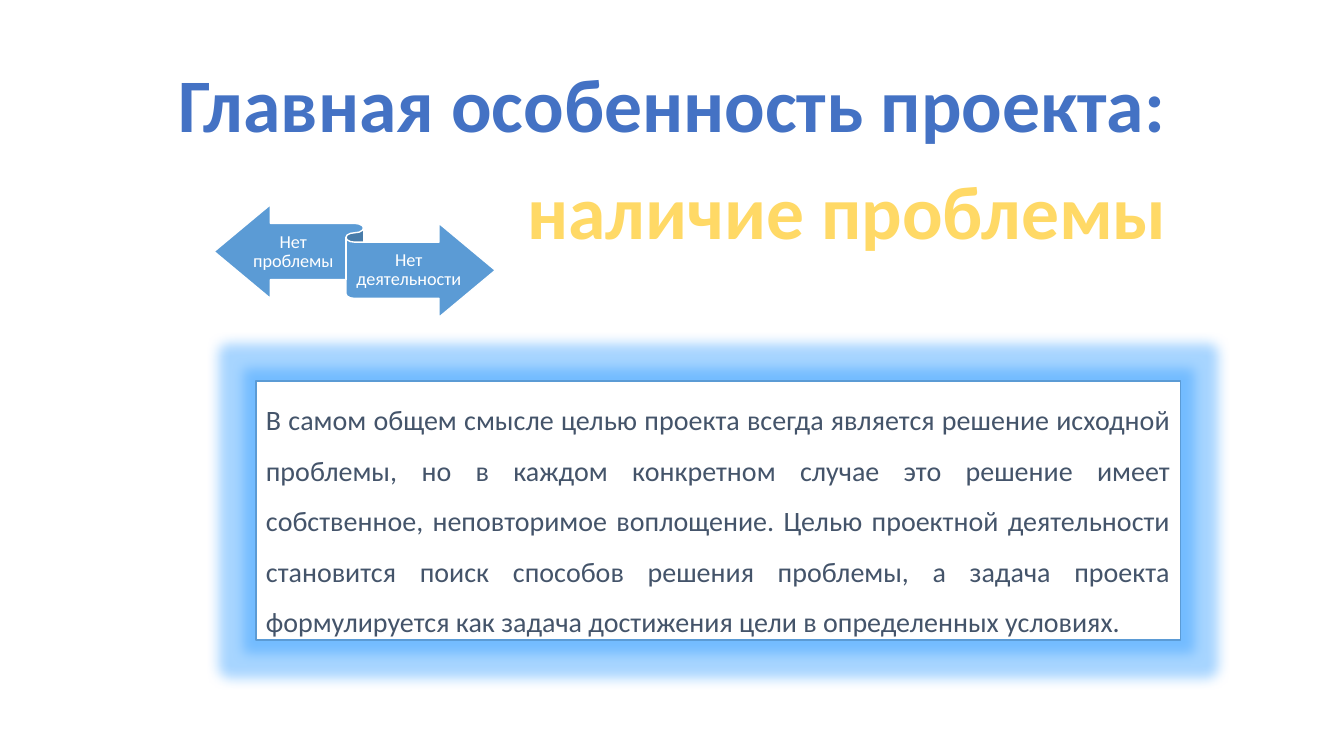
from lxml import etree
from pptx import Presentation
from pptx.dml.color import RGBColor
from pptx.enum.shapes import MSO_SHAPE
from pptx.enum.text import MSO_ANCHOR, MSO_AUTO_SIZE, PP_ALIGN
from pptx.oxml import parse_xml
from pptx.oxml.ns import qn
from pptx.util import Pt

RIBBON = MSO_SHAPE.LEFT_RIGHT_RIBBON
RECTANGLE = MSO_SHAPE.RECTANGLE
TOP, MIDDLE = MSO_ANCHOR.TOP, MSO_ANCHOR.MIDDLE
CENTER, JUSTIFY = PP_ALIGN.CENTER, PP_ALIGN.JUSTIFY
GROW = MSO_AUTO_SIZE.SHAPE_TO_FIT_TEXT

WHITE = RGBColor(0xFF, 0xFF, 0xFF)
BLUE = RGBColor(0x5B, 0x9B, 0xD5)
HEADING_BLUE = RGBColor(0x44, 0x72, 0xC4)
SLATE = RGBColor(0x44, 0x54, 0x6A)
GLOW_BLUE = RGBColor(0x25, 0x96, 0xFF)
GOLD = RGBColor(0xFF, 0xC0, 0x00)
LIGHT_GOLD = RGBColor(0xFF, 0xD9, 0x66)
PALE_GOLD = RGBColor(0xFF, 0xF2, 0xCC)

FONT = "Calibri"
DRAWING = 'xmlns:a="http://schemas.openxmlformats.org/drawingml/2006/main"'
GOAL = (
    "В самом общем смысле целью проекта всегда является решение исходной "
    "проблемы, но в каждом конкретном случае это решение имеет собственное, "
    "неповторимое воплощение. Целью проектной деятельности становится поиск "
    "способов решения проблемы, а задача проекта формулируется как задача "
    "достижения цели в определенных условиях."
)


def place(box, left, top, width, height):
    box.left, box.top = Pt(left), Pt(top)
    box.width, box.height = Pt(width), Pt(height)


def write(box, text, size, color, align=CENTER, spacing=1.0, bold=False):
    """Fill the box with one paragraph and return its run."""
    para = box.text_frame.paragraphs[0]
    para.alignment = align
    para.line_spacing = spacing
    font = para.font
    font.name, font.size, font.bold = FONT, Pt(size), bold
    font.color.rgb = color
    span = para.add_run()
    span.text = text
    return span


def write_heading(box, text, color, outline, outline_width):
    frame = box.text_frame
    frame.word_wrap = False
    frame.auto_size = GROW
    frame.vertical_anchor = TOP
    span = write(box, text, 54, color, bold=True)
    line = parse_xml(
        f'<a:ln {DRAWING} w="{Pt(outline_width)}"><a:solidFill>'
        f'<a:srgbClr val="{outline}"/></a:solidFill></a:ln>'
    )
    span.font._element.insert(0, line)
    return span


def add_vertical_gradient(span, stops):
    """Fill the letters with a downward gradient of (percent, colour) stops."""
    gradient = etree.SubElement(span.font._element, qn("a:gradFill"))
    stop_list = etree.SubElement(gradient, qn("a:gsLst"))
    for percent, color in stops:
        stop = etree.SubElement(stop_list, qn("a:gs"), pos=str(percent * 1000))
        etree.SubElement(stop, qn("a:srgbClr"), val=str(color))
    etree.SubElement(gradient, qn("a:lin"), ang="5400000", scaled="0")


def add_filled_shape(shapes, kind, bounds, fill, line):
    shape = shapes.add_shape(kind, *map(Pt, bounds))
    shape.shadow.inherit = False
    shape.fill.solid()
    shape.fill.fore_color.rgb = fill
    shape.line.color.rgb = line
    shape.line.width = Pt(1)
    return shape


def add_glow(shape, color, radius):
    effects = shape._element.spPr.find(qn("a:effectLst"))
    glow = etree.SubElement(effects, qn("a:glow"), rad=str(Pt(radius)))
    tint = etree.SubElement(glow, qn("a:srgbClr"), val=str(color))
    etree.SubElement(tint, qn("a:alpha"), val="40000")


def add_ribbon_label(shapes, text, bounds):
    label = shapes.add_textbox(*map(Pt, bounds))
    frame = label.text_frame
    frame.word_wrap = True
    frame.vertical_anchor = MIDDLE
    frame.margin_left = frame.margin_right = 0
    write(label, text, 13, WHITE, spacing=0.9)


def add_ribbon(slide):
    shapes = slide.shapes.add_group_shape().shapes
    add_filled_shape(shapes, RIBBON, (152.9, 146.2, 200.9, 80.4), BLUE, WHITE)
    add_ribbon_label(shapes, "Нет проблемы", (176.4, 160.3, 66.2, 39.4))
    add_ribbon_label(shapes, "Нет деятельности", (252.7, 173.2, 78.5, 39.4))


def add_goal_panel(slide):
    bounds = (182.9, 272.2, 660.2, 185)
    panel = add_filled_shape(slide.shapes, RECTANGLE, bounds, WHITE, BLUE)
    add_glow(panel, GLOW_BLUE, 18)
    frame = panel.text_frame
    frame.word_wrap = True
    frame.auto_size = GROW
    frame.vertical_anchor = TOP
    write(panel, GOAL, 20, SLATE, JUSTIFY, 1.5)


def main():
    deck = Presentation()
    deck.slide_width, deck.slide_height = Pt(960), Pt(540)
    page = deck.slides.add_slide(deck.slide_layouts.get_by_name("Title Only"))

    title = page.shapes.title
    place(title, 116.6, 36.7, 727.2, 72.7)
    write_heading(title, "Главная особенность проекта:", HEADING_BLUE, WHITE, 0.75)

    add_ribbon(page)
    add_goal_panel(page)

    subtitle = page.shapes.add_textbox(Pt(367.2), Pt(113.8), Pt(475.9), Pt(72.7))
    span = write_heading(subtitle, "наличие проблемы", LIGHT_GOLD, GOLD, 1)
    add_vertical_gradient(span, [(0, GOLD), (4, LIGHT_GOLD), (87, PALE_GOLD)])

    deck.save("out.pptx")


if __name__ == "__main__":
    main()
